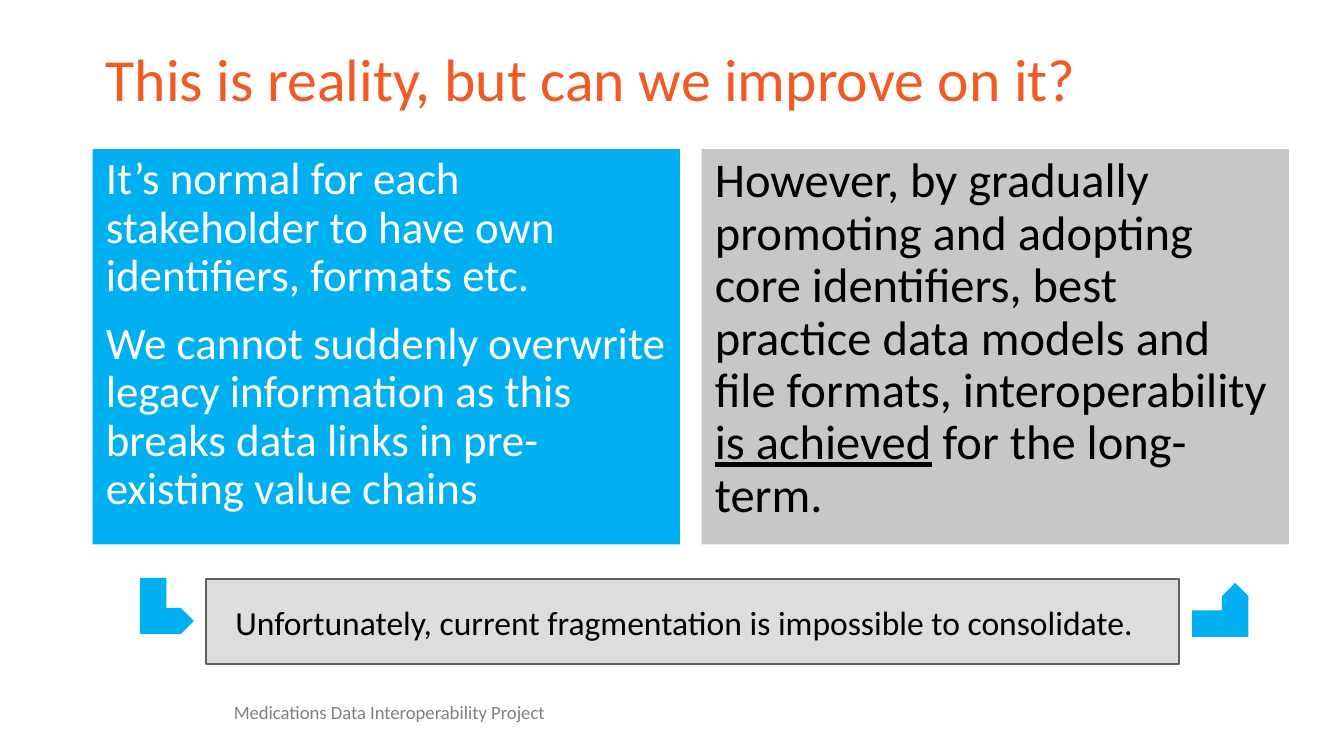
"""Build a slide that sets today's fragmented medication data against gradual improvement."""
from dataclasses import dataclass

from pptx import Presentation
from pptx.dml.color import RGBColor
from pptx.enum.shapes import MSO_SHAPE
from pptx.enum.text import MSO_ANCHOR, MSO_AUTO_SIZE, PP_ALIGN
from pptx.util import Cm, Pt

RECTANGLE = MSO_SHAPE.RECTANGLE
BENT_ARROW = MSO_SHAPE.BENT_UP_ARROW
TOP, MIDDLE, BOTTOM = MSO_ANCHOR.TOP, MSO_ANCHOR.MIDDLE, MSO_ANCHOR.BOTTOM
LEFT, CENTER = PP_ALIGN.LEFT, PP_ALIGN.CENTER
NO_AUTOFIT = MSO_AUTO_SIZE.NONE

FONT = "Calibri"
BLUE, ORANGE, BLACK, WHITE = "00B0F0", "F15A24", "000000", "FFFFFF"
MARGIN = 1.75
SIDE_INSET, EDGE_INSET = 0.25, 0.13


@dataclass(frozen=True)
class Span:
    text: str
    underline: bool = False


@dataclass(frozen=True)
class TextStyle:
    size: float
    color: str
    align: PP_ALIGN = LEFT
    anchor: MSO_ANCHOR = TOP
    line_spacing: float = 0.9
    insets: tuple[float, float, float, float] = (SIDE_INSET, EDGE_INSET, SIDE_INSET, EDGE_INSET)


@dataclass(frozen=True)
class Panel:
    left: float
    top: float
    width: float
    height: float
    fill: str
    paragraphs: list[list[Span]]
    style: TextStyle
    line: str | None = None


@dataclass(frozen=True)
class Arrow:
    left: float
    top: float
    rotation: float


PANELS = [
    Panel(MARGIN, 2.82, 11.1, 7.47, BLUE, [
        [Span("It’s normal for each stakeholder to have own identifiers, formats etc.")],
        [Span("We cannot suddenly overwrite legacy information as this breaks data links "
              "in pre-existing value chains")],
    ], TextStyle(24.1, WHITE)),
    Panel(13.26, 2.82, 11.1, 7.47, "C7C7C7", [[
        Span("However, by gradually promoting and adopting core identifiers, best practice "
             "data models and file formats, interoperability "),
        Span("is achieved", underline=True),
        Span(" for the long-term."),
    ]], TextStyle(26, BLACK)),
    Panel(3.89, 10.95, 18.39, 1.6, "DDDDDD", [
        [Span("Unfortunately, current fragmentation is impossible to consolidate.")],
    ], TextStyle(18, BLACK, CENTER, MIDDLE, 1.0, (SIDE_INSET, EDGE_INSET, 0.55, EDGE_INSET)),
        line="616161"),
]
ARROWS = [Arrow(2.62, 10.95, 90), Arrow(22.53, 11.02, 0)]


def rgb(value: str) -> RGBColor:
    """Turn a hex string into a colour."""
    return RGBColor.from_string(value)


def write_text(frame, paragraphs: list[list[Span]], style: TextStyle) -> None:
    """Fill a text frame with styled paragraphs."""
    frame.word_wrap = True
    frame.auto_size = NO_AUTOFIT
    frame.vertical_anchor = style.anchor
    (frame.margin_left, frame.margin_top,
     frame.margin_right, frame.margin_bottom) = map(Cm, style.insets)
    for index, spans in enumerate(paragraphs):
        para = frame.add_paragraph() if index else frame.paragraphs[0]
        para.alignment = style.align
        para.line_spacing = style.line_spacing
        para.space_before = Pt(10 if index else 0)
        para.font.name = FONT
        para.font.size = Pt(style.size)
        para.font.color.rgb = rgb(style.color)
        for span in spans:
            run = para.add_run()
            run.text = span.text
            if span.underline:
                run.font.underline = True


def add_filled_shape(page, kind: MSO_SHAPE, left: float, top: float,
                     width: float, height: float, fill: str):
    """Add a flat shape without an outline."""
    shape = page.shapes.add_shape(kind, Cm(left), Cm(top), Cm(width), Cm(height))
    shape.shadow.inherit = False
    shape.fill.solid()
    shape.fill.fore_color.rgb = rgb(fill)
    shape.line.fill.background()
    return shape


def add_panel(page, panel: Panel) -> None:
    """Add a coloured rectangle with text."""
    box = add_filled_shape(page, RECTANGLE, panel.left, panel.top,
                           panel.width, panel.height, panel.fill)
    if panel.line:
        box.line.color.rgb = rgb(panel.line)
        box.line.width = Pt(1)
    write_text(box.text_frame, panel.paragraphs, panel.style)


def add_arrow(page, arrow: Arrow) -> None:
    """Add a bent arrow beside the message bar."""
    shape = add_filled_shape(page, BENT_ARROW, arrow.left, arrow.top, 1.07, 1.02, BLUE)
    shape.rotation = arrow.rotation
    shape.adjustments[0] = 0.49


def add_title(page, text: str) -> None:
    """Place and format the title placeholder."""
    title = page.shapes.title
    title.left, title.top, title.width, title.height = Cm(MARGIN), Cm(0.76), Cm(21.89), Cm(1.6)
    write_text(title.text_frame, [[Span(text)]], TextStyle(32, ORANGE, anchor=MIDDLE))


def add_project_name(page, text: str) -> None:
    """Add the project name at the foot of the slide."""
    box = page.shapes.add_textbox(Cm(4.42), Cm(13.21), Cm(7.7), Cm(0.46))
    write_text(box.text_frame, [[Span(text)]],
               TextStyle(10, "808080", anchor=BOTTOM, insets=(0, 0, 0, 0)))


def main() -> None:
    """Build and save the deck."""
    deck = Presentation()
    deck.slide_width, deck.slide_height = Cm(25.4), Cm(14.29)
    page = deck.slides.add_slide(deck.slide_layouts[5])
    add_title(page, "This is reality, but can we improve on it?")
    for panel in PANELS:
        add_panel(page, panel)
    for arrow in ARROWS:
        add_arrow(page, arrow)
    add_project_name(page, "Medications Data Interoperability Project")
    deck.save("out.pptx")


if __name__ == "__main__":
    main()
